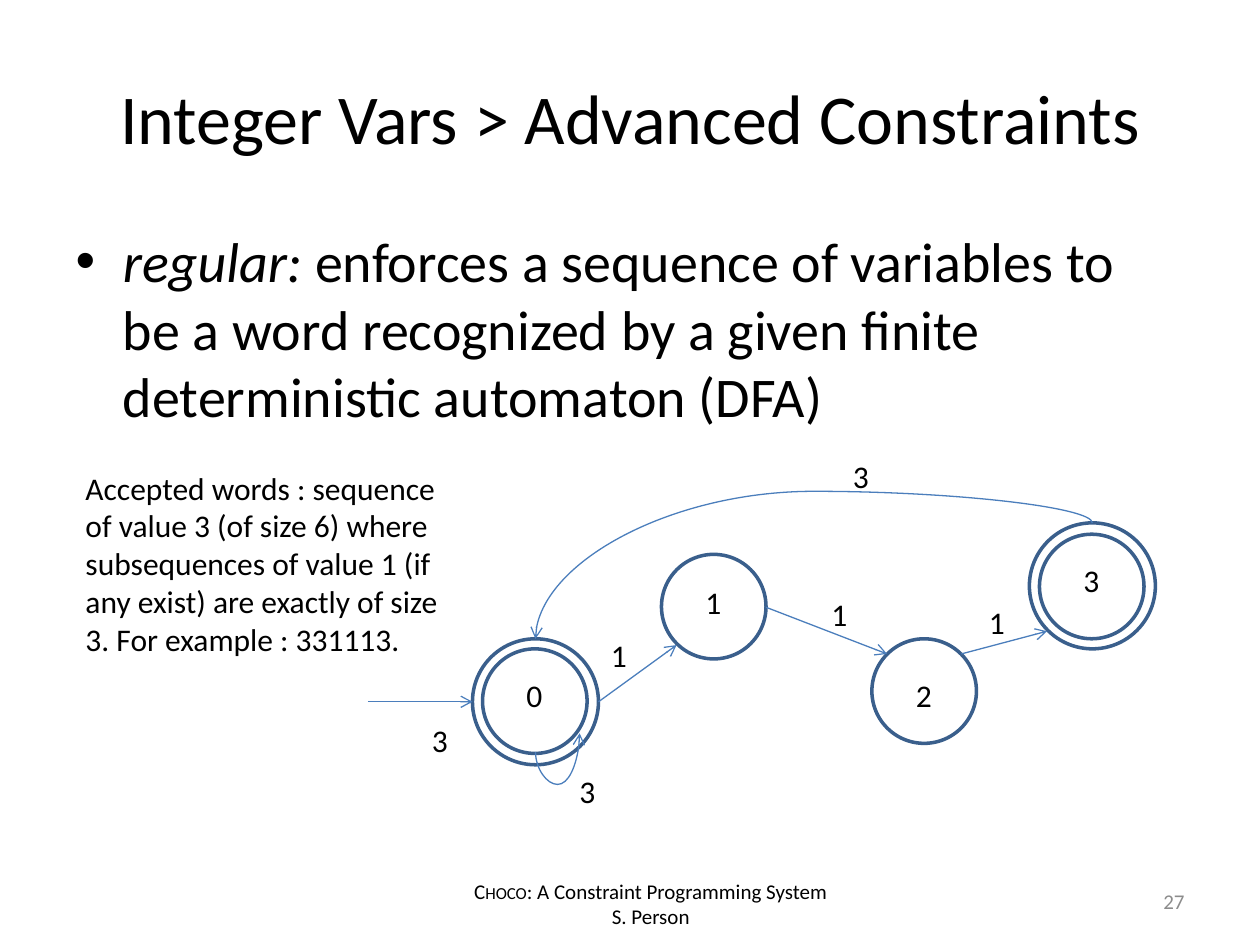
from lxml import etree
from pptx import Presentation
from pptx.dml.color import RGBColor
from pptx.enum.shapes import MSO_CONNECTOR, MSO_SHAPE
from pptx.enum.text import MSO_ANCHOR, PP_ALIGN
from pptx.oxml.ns import qn
from pptx.util import Inches, Pt

STRAIGHT, CURVE = MSO_CONNECTOR.STRAIGHT, MSO_CONNECTOR.CURVE
OVAL = MSO_SHAPE.OVAL
LEFT, CENTER, RIGHT = PP_ALIGN.LEFT, PP_ALIGN.CENTER, PP_ALIGN.RIGHT
MIDDLE = MSO_ANCHOR.MIDDLE


def rgb(value):
    return RGBColor.from_string(value)


def add_text(x, y, w, h, text, size=18, color="000000", align=LEFT):
    tb = s.shapes.add_textbox(Inches(x), Inches(y), Inches(w), Inches(h))
    tf = tb.text_frame
    tf.word_wrap = True
    tf.text = text
    for p in tf.paragraphs:
        p.alignment = align
        for r in p.runs:
            r.font.name = "Calibri"
            r.font.size = Pt(size)
            r.font.color.rgb = rgb(color)
    return tf


prs = Presentation()
prs.slide_width, prs.slide_height = Inches(10), Inches(7.5)
s = prs.slides.add_slide(prs.slide_layouts[1])

title, body = s.placeholders
title.left, title.top = Inches(0.5), Inches(0.3)
title.width, title.height = Inches(9), Inches(1.25)
title.text_frame.text = "Integer Vars > Advanced Constraints"
body.left, body.top = Inches(0.5), Inches(1.75)
body.width, body.height = Inches(9), Inches(1.83)
p = body.text_frame.paragraphs[0]
p.add_run().text = "regular: "
p.add_run().text = (
    "enforces a sequence of variables to be a word recognized "
    "by a given finite deterministic automaton (DFA)"
)
p.runs[0].font.italic = True
for sp, size in [(title, 40), (body, 32)]:
    for r in sp.text_frame.paragraphs[0].runs:
        r.font.name = "Calibri"
        r.font.size = Pt(size)
        r.font.color.rgb = rgb("000000")

circles = [
    (3.75, 5.07, 1),
    (3.83, 5.15, 0.83),
    (6.92, 5.07, 0.83),
    (5.25, 4.4, 0.83),
    (8.17, 4.15, 1),
    (8.25, 4.24, 0.83),
]
for x, y, d in circles:
    sp = s.shapes.add_shape(OVAL, Inches(x), Inches(y), Inches(d), Inches(d))
    sp.shadow.inherit = False
    sp.fill.solid()
    sp.fill.fore_color.rgb = rgb("FFFFFF")
    sp.line.color.rgb = rgb("3A5F8C")
    sp.line.width = Pt(2)

arrows = [
    (STRAIGHT, 2.92, 5.57, 3.75, 5.57, 0, None),
    (STRAIGHT, 4.75, 5.57, 5.37, 5.12, 0, None),
    (STRAIGHT, 6.08, 4.82, 7.04, 5.19, 0, None),
    (STRAIGHT, 7.63, 5.19, 8.31, 5.01, 0, None),
    (CURVE, 6.92, 6.82, 6, 2.4, 270, -27300),
    (CURVE, 4.5, 6.07, 4.35, 5.72, 90, -170700),
]
for kind, x1, y1, x2, y2, angle, bend in arrows:
    c = s.shapes.add_connector(kind, Inches(x1), Inches(y1), Inches(x2), Inches(y2))
    c.line.color.rgb = rgb("4B7EBC")
    c.line.width = Pt(0.75)
    etree.SubElement(c.line._get_or_add_ln(), qn("a:tailEnd"), type="arrow")
    spPr = c._element.spPr
    etree.SubElement(spPr, qn("a:effectLst"))
    if kind == CURVE:
        spPr.find(qn("a:xfrm")).set("rot", str(angle * 60000))
        guides = spPr.find(qn("a:prstGeom")).find(qn("a:avLst"))
        etree.SubElement(guides, qn("a:gd"), name="adj1", fmla=f"val {bend}")

labels = [
    ("0", 4.08, 5.32),
    ("1", 5.5, 4.58),
    ("2", 7.17, 5.32),
    ("3", 8.5, 4.4),
    ("1", 4.75, 5),
    ("1", 6.5, 4.67),
    ("1", 7.75, 4.74),
    ("3", 6.67, 3.58),
    ("3", 3.33, 5.67),
    ("3", 4.5, 6.08),
]
for text, x, y in labels:
    add_text(x, y, 0.42, 0.4, text)

add_text(
    0.58, 3.67, 3.08, 1.62,
    "Accepted words : sequence of value 3 (of size 6) where subsequences of "
    "value 1 (if any exist) are exactly of size 3. For example : 331113.",
)

tf = add_text(3.5, 6.92, 3.33, 0.5, "Choco: A Constraint Programming System\nS. Person", 12, align=CENTER)
p = tf.paragraphs[0]
p.runs[0].text = "Choco"
p.runs[0].font._element.set("cap", "small")
r = p.add_run()
r.text = ": A Constraint Programming System"
r.font.name = "Calibri"
r.font.size = Pt(12)
r.font.color.rgb = rgb("000000")

tf = add_text(7.17, 6.95, 2.33, 0.4, "27", 12, "8C8C8C", RIGHT)
tf.vertical_anchor = MIDDLE

prs.save("out.pptx")
